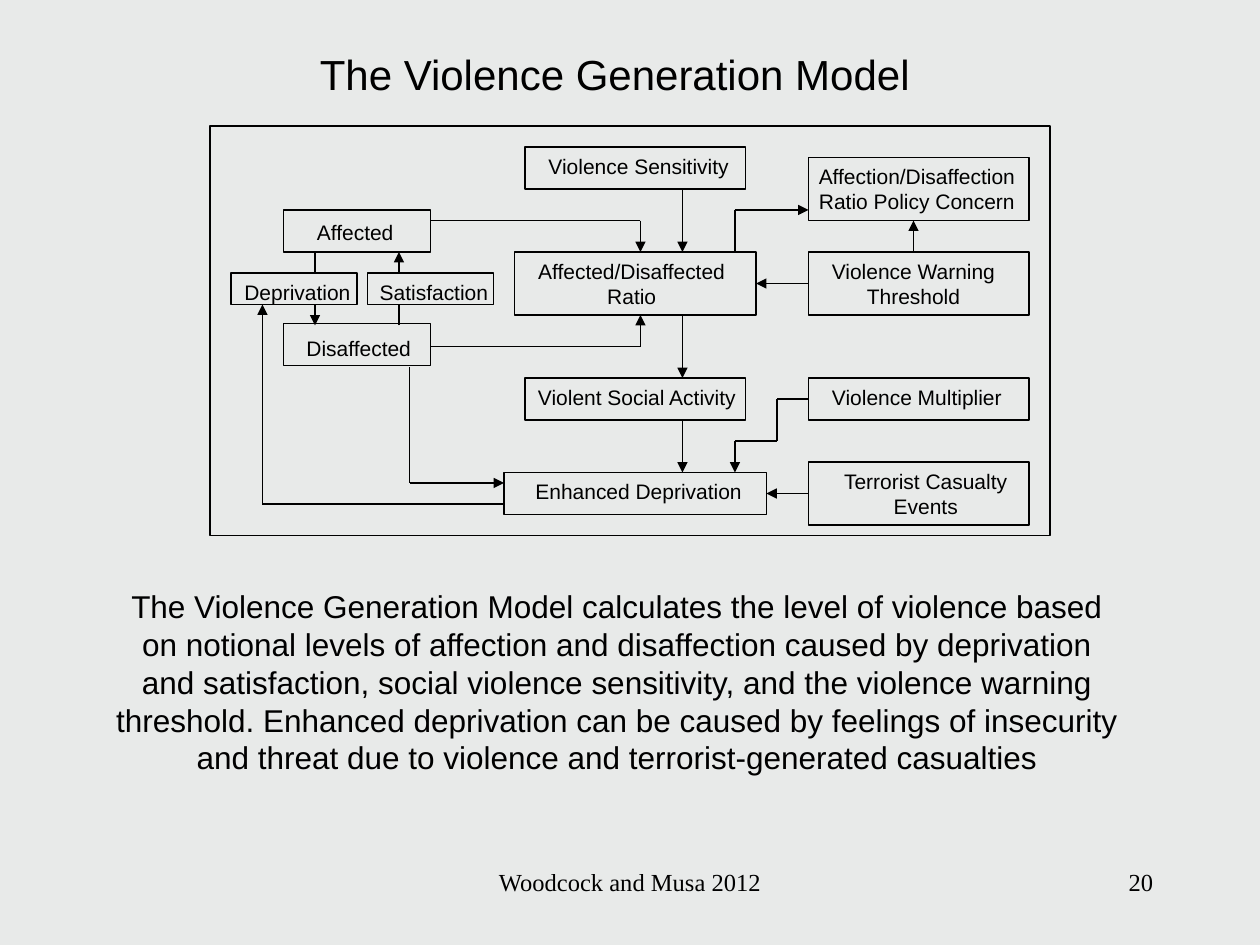
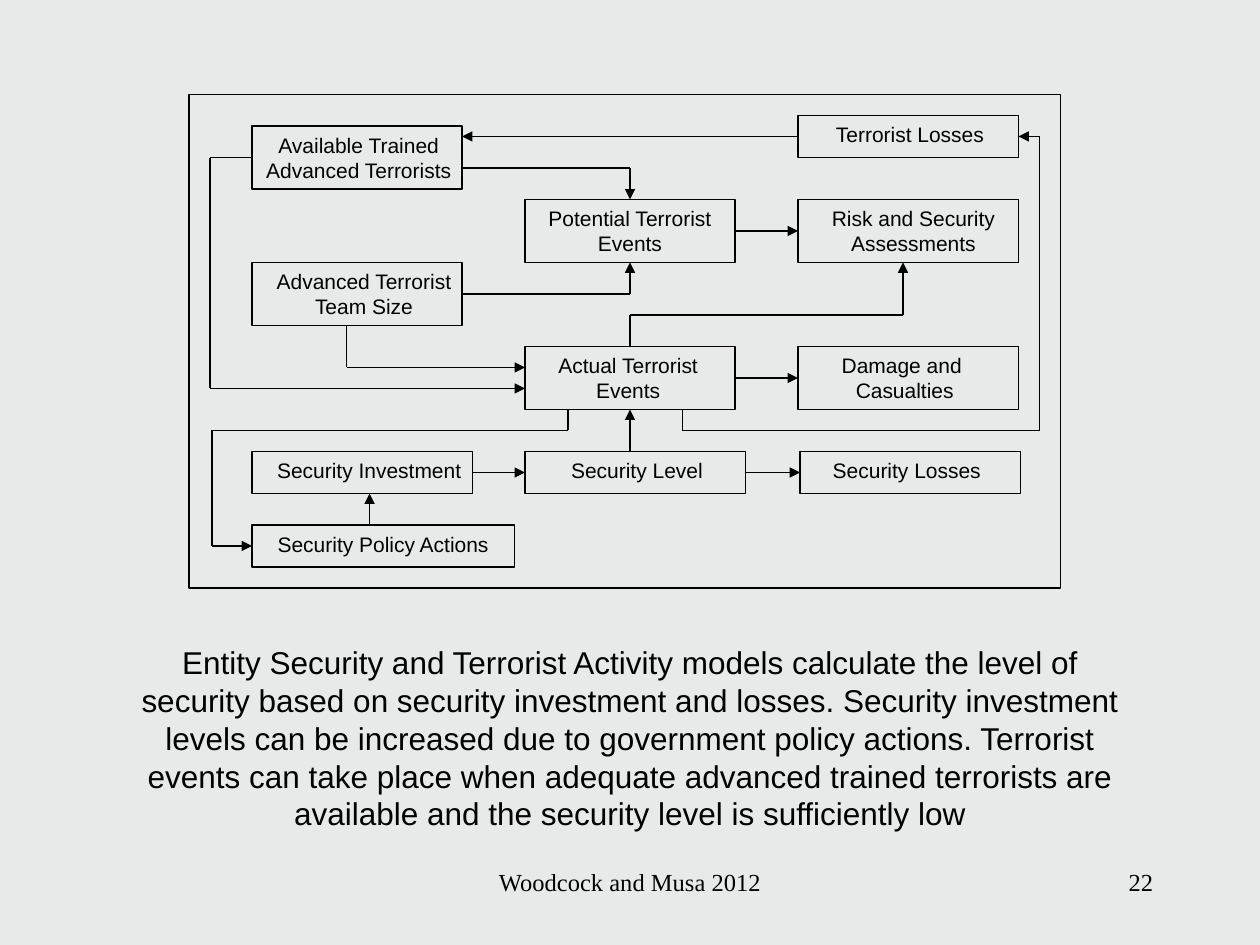
from lxml import etree
from pptx import Presentation
from pptx.dml.color import RGBColor
from pptx.enum.shapes import MSO_CONNECTOR, MSO_SHAPE
from pptx.enum.text import MSO_ANCHOR, PP_ALIGN
from pptx.oxml.ns import qn
from pptx.util import Pt

RECTANGLE = MSO_SHAPE.RECTANGLE
STRAIGHT = MSO_CONNECTOR.STRAIGHT
TOP = MSO_ANCHOR.TOP
LEFT, CENTER, RIGHT = PP_ALIGN.LEFT, PP_ALIGN.CENTER, PP_ALIGN.RIGHT

BACKGROUND = "E8EAE9"
INK = "000000"
GRID = 6
LINE_WIDTH = 0.75

TITLE_FONT = {"name": "Arial", "size": Pt(24)}
CAPTION_FONT = {"name": "Arial", "size": Pt(18)}
LABEL_FONT = {"name": "Arial", "size": Pt(12)}
FOOTER_FONT = {"name": "Times New Roman", "size": Pt(14)}

# label: (left, top, width, height in grid steps, text shift, text drop in points)
VIOLENCE_BOXES = {
    "Violence Sensitivity": (50, 14, 21, 4, 2, 0),
    "Affection/Disaffection\nRatio Policy Concern": (77, 15, 21, 6, -1, 0),
    "Affected": (27, 20, 14, 4, -1, 2),
    "Affected/Disaffected\nRatio": (49, 24, 23, 6, -2, 0),
    "Violence Warning\nThreshold": (77, 24, 21, 6, -3, 0),
    "Deprivation": (22, 26, 12, 3, 2, 0),
    "Satisfaction": (35, 26, 12, 3, 2, 0),
    "Disaffected": (27, 30.8, 14, 4, 1, 3.6),
    "Violent Social Activity": (50, 36, 21, 4, 1, 0),
    "Violence Multiplier": (77, 36, 21, 4, -1, 0),
    "Terrorist Casualty\nEvents": (77, 44, 21, 6, 4, 0),
    "Enhanced Deprivation": (48, 45, 25, 4, 2, 0),
}
VIOLENCE_ARROWS = [
    [(65, 18), (65, 24)],
    [(65, 30), (65, 36)],
    [(65, 40), (65, 45)],
    [(77, 27), (72, 27)],
    [(87, 24), (87, 21)],
    [(70, 24), (70, 20), (77, 20)],
    [(41, 21), (61, 21), (61, 24)],
    [(41, 33), (61, 33), (61, 30)],
    [(38, 26), (38, 24)],
    [(30, 29), (30, 31)],
    [(39, 35), (39, 46), (48, 46)],
    [(48, 48), (25, 48), (25, 29)],
    [(77, 38), (74, 38), (74, 42), (70, 42), (70, 45)],
    [(77, 47), (73, 47)],
]
VIOLENCE_LINES = [
    [(30, 26), (30, 24)],
    [(38, 31), (38, 29)],
]
VIOLENCE_CAPTION = (
    "The Violence Generation Model calculates the level of violence based on notional levels "
    "of affection and disaffection caused by deprivation and satisfaction, social violence "
    "sensitivity, and the violence warning threshold. Enhanced deprivation can be caused by "
    "feelings of insecurity and threat due to violence and terrorist-generated casualties"
)

SECURITY_BOXES = {
    "Available Trained\nAdvanced Terrorists": (24, 12, 20, 6, 1, 0),
    "Terrorist Losses": (76, 11, 21, 4, 1, 0),
    "Potential Terrorist\nEvents": (50, 19, 20, 6, 0, 0),
    "Risk and Security\nAssessments": (76, 19, 21, 6, 3, 0),
    "Advanced Terrorist\nTeam Size": (24, 25, 20, 6, 4, 0),
    "Actual Terrorist\nEvents": (50, 33, 20, 6, -1, 0),
    "Damage and \nCasualties": (76, 33, 21, 6, -2, 0),
    "Security Investment": (24, 43, 21, 4, 4, 0),
    "Security Level": (50, 43, 21, 4, 1, 0),
    "Security Losses": (76.2, 43, 21, 4, -2, 0),
    "Security Policy Actions": (24, 50, 25, 4, 0, 0),
}
SECURITY_ARROWS = [
    [(76, 13), (44, 13)],
    [(44, 16), (60, 16), (60, 19)],
    [(44, 28), (60, 28), (60, 25)],
    [(33, 31), (33, 35), (50, 35)],
    [(24, 15), (20, 15), (20, 37), (50, 37)],
    [(70, 22), (76, 22)],
    [(70, 36), (76, 36)],
    [(60, 33), (60, 30), (86, 30), (86, 25)],
    [(65, 39), (65, 41), (99, 41), (99, 13), (97, 13)],
    [(54.1, 39), (54.1, 41), (20.2, 41), (20.2, 52), (24, 52)],
    [(60, 43), (60, 39)],
    [(45, 45), (50, 45)],
    [(71, 45), (76.2, 45)],
    [(35.2, 50), (35.2, 47)],
]
SECURITY_CAPTION = (
    "Entity Security and Terrorist Activity models calculate the level of security based on "
    "security investment and losses. Security investment levels can be increased due to "
    "government policy actions. Terrorist events can take place when adequate advanced trained "
    "terrorists are available and the security level is sufficiently low"
)


def color(hex_value):
    return RGBColor.from_string(hex_value)


def apply_format(target, values):
    for name, value in values.items():
        setattr(target, name, value)


def write_text(text_frame, text, font, alignment):
    text_frame.text = text
    for paragraph in text_frame.paragraphs:
        paragraph.alignment = alignment
        apply_format(paragraph.font, font)
        paragraph.font.color.rgb = color(INK)


def add_text(slide, text, bounds, font, alignment=CENTER, wrap=True):
    shape = slide.shapes.add_textbox(*map(Pt, bounds))
    shape.text_frame.word_wrap = wrap
    write_text(shape.text_frame, text, font, alignment)


def add_outline(slide, bounds):
    shape = slide.shapes.add_shape(RECTANGLE, *(Pt(GRID * value) for value in bounds))
    shape.shadow.inherit = False
    shape.fill.background()
    shape.line.color.rgb = color(INK)
    shape.line.width = Pt(LINE_WIDTH)
    return shape


def add_box(slide, label, bounds, shift, drop):
    shape = add_outline(slide, bounds)
    apply_format(shape.text_frame, {
        "word_wrap": True,
        "vertical_anchor": TOP,
        "margin_left": Pt(max(2 * shift, 0)),
        "margin_right": Pt(max(-2 * shift, 0)),
        "margin_top": Pt(3.6 + drop),
        "margin_bottom": Pt(0),
    })
    write_text(shape.text_frame, label, LABEL_FONT, CENTER)
    return shape


def find_sites(bounds):
    left, top, width, height = bounds
    middle_x, middle_y = left + width / 2, top + height / 2
    return [(middle_x, top), (left, middle_y), (middle_x, top + height), (left + width, middle_y)]


def join(connect, point, boxes):
    for shape, bounds in boxes:
        for index, site in enumerate(find_sites(bounds)):
            if all(abs(a - b) < 0.01 for a, b in zip(point, site)):
                connect(shape, index)


def add_route(slide, points, boxes, arrow):
    for start, end in zip(points, points[1:]):
        connector = slide.shapes.add_connector(
            STRAIGHT, *(Pt(GRID * value) for value in start + end))
        connector.line.color.rgb = color(INK)
        connector.line.width = Pt(LINE_WIDTH)
        properties = connector._element.spPr
        if arrow and end == points[-1]:
            etree.SubElement(properties.find(qn("a:ln")), qn("a:tailEnd"), type="triangle")
        etree.SubElement(properties, qn("a:effectLst"))
        join(connector.begin_connect, start, boxes)
        join(connector.end_connect, end, boxes)


def add_diagram(slide, frame, labels, arrows, lines=()):
    add_outline(slide, frame)
    boxes = []
    for label, (left, top, width, height, shift, drop) in labels.items():
        bounds = (left, top, width, height)
        boxes.append((add_box(slide, label, bounds, shift, drop), bounds))
    for points in arrows:
        add_route(slide, points, boxes, True)
    for points in lines:
        add_route(slide, points, boxes, False)


def add_slide(presentation, number):
    slide = presentation.slides.add_slide(presentation.slide_layouts[6])
    slide.background.fill.solid()
    slide.background.fill.fore_color.rgb = color(BACKGROUND)
    add_text(slide, "Woodcock and Musa 2012", (246, 492, 228, 36), FOOTER_FONT)
    add_text(slide, str(number), (516, 492, 150, 36), FOOTER_FONT, RIGHT)
    return slide


def main():
    presentation = Presentation()
    apply_format(presentation, {"slide_width": Pt(720), "slide_height": Pt(540)})

    slide = add_slide(presentation, 20)
    add_text(slide, "The Violence Generation Model", (175.7, 24, 352, 36), TITLE_FONT, LEFT, False)
    add_diagram(slide, (20, 12, 80, 39), VIOLENCE_BOXES, VIOLENCE_ARROWS, VIOLENCE_LINES)
    add_text(slide, VIOLENCE_CAPTION, (57, 332, 591, 115), CAPTION_FONT)

    slide = add_slide(presentation, 22)
    add_diagram(slide, (18, 9, 83, 47), SECURITY_BOXES, SECURITY_ARROWS)
    add_text(slide, SECURITY_CAPTION, (66, 364, 588, 115), CAPTION_FONT)

    presentation.save("out.pptx")


if __name__ == "__main__":
    main()
